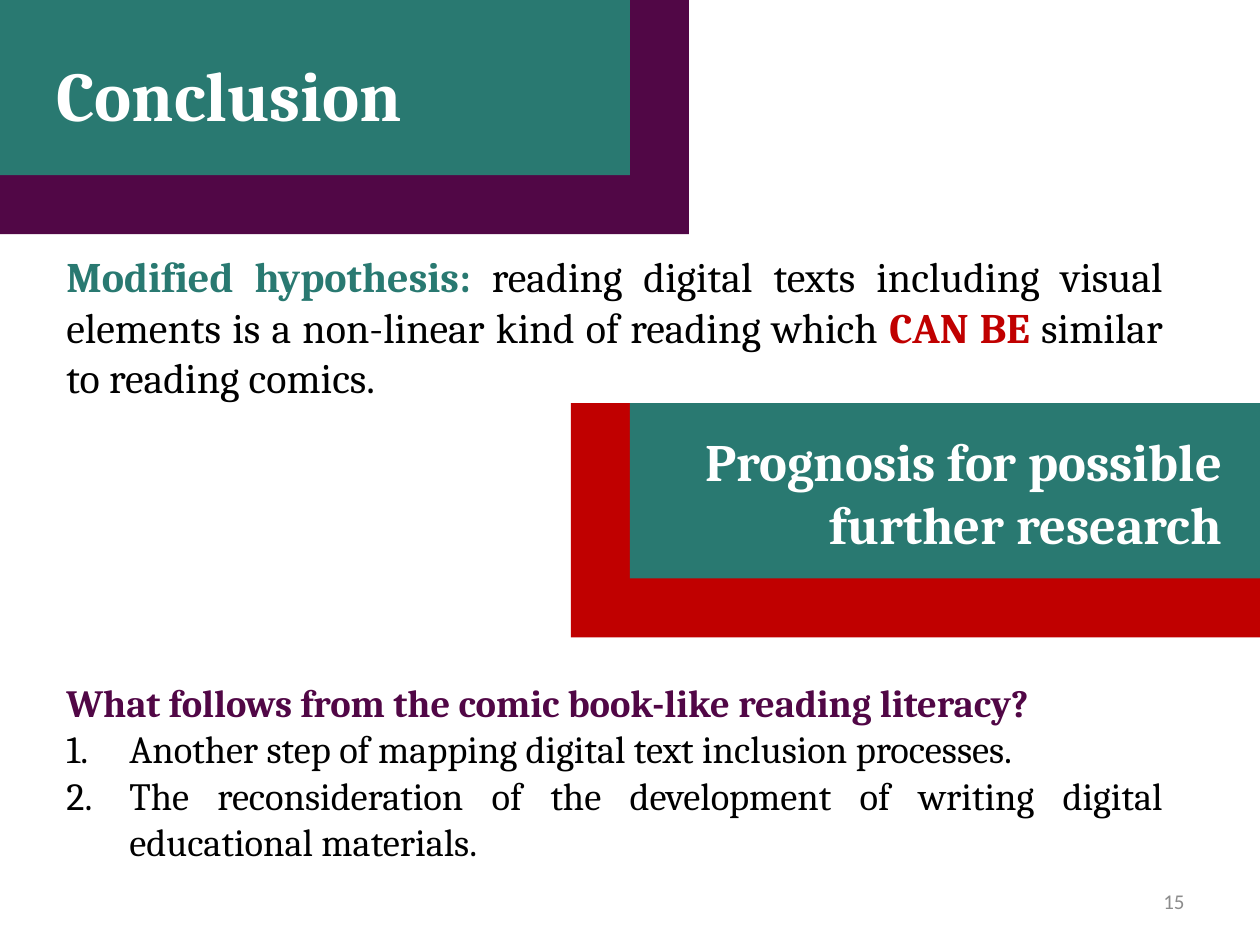
import dataclasses

import lxml.etree
import pptx
import pptx.dml.color
import pptx.enum.shapes
import pptx.enum.text
import pptx.oxml.ns
import pptx.util

Cm = pptx.util.Cm
Align = pptx.enum.text.PP_ALIGN
Anchor = pptx.enum.text.MSO_ANCHOR


@dataclasses.dataclass(frozen=True)
class Theme:
    heading_font: str = "Cambria"
    number_font: str = "Calibri"
    teal: str = "297971"
    purple: str = "510746"
    red: str = "C00000"
    black: str = "000000"
    white: str = "FFFFFF"
    grey: str = "8C8C8C"
    title_size: int = 40
    banner_size: int = 30
    hypothesis_size: int = 24
    list_size: int = 22
    number_size: int = 12


class SlideBuilder:
    def __init__(self, presentation, theme):
        self.theme = theme
        self.slide = presentation.slides.add_slide(presentation.slide_layouts[5])

    def background(self, color):
        fill = self.slide.background.fill
        fill.solid()
        fill.fore_color.rgb = pptx.dml.color.RGBColor.from_string(color)

    def rectangle(self, left, top, width, height, color):
        shape = self.slide.shapes.add_shape(
            pptx.enum.shapes.MSO_SHAPE.RECTANGLE,
            Cm(left), Cm(top), Cm(width), Cm(height))
        shape.shadow.inherit = False
        shape.fill.solid()
        shape.fill.fore_color.rgb = pptx.dml.color.RGBColor.from_string(color)
        shape.line.fill.background()

    def banner(self, left, top, border_color, border_side):
        """Draw a teal panel with a border below it and on its "left" or "right"."""
        width, height, border = 12.7, 3.53, 1.19
        border_left = left - border if border_side == "left" else left
        self.rectangle(border_left, top, width + border, height + border, border_color)
        self.rectangle(left, top, width, height, self.theme.teal)

    def title(self, text, left, top, width, height):
        shape = self.slide.shapes.title
        shape.left, shape.top, shape.width, shape.height = map(Cm, (left, top, width, height))
        # Bring the title in front of the banners.
        self.slide.shapes._spTree.append(shape._element)
        self.prepare_frame(shape.text_frame)
        self.fill_paragraph(shape.text_frame.paragraphs[0], [(text, self.theme.white, True)],
                            self.theme.title_size, Align.LEFT)

    def text_box(self, left, top, width, height, anchor=Anchor.TOP):
        shape = self.slide.shapes.add_textbox(Cm(left), Cm(top), Cm(width), Cm(height))
        self.prepare_frame(shape.text_frame, anchor)
        return shape.text_frame

    def prepare_frame(self, frame, anchor=Anchor.TOP):
        frame.word_wrap = True
        frame.auto_size = pptx.enum.text.MSO_AUTO_SIZE.NONE
        frame.vertical_anchor = anchor

    def fill_paragraph(self, paragraph, pieces, size, alignment, font=None):
        """Fill a paragraph with (text, color, bold) pieces."""
        paragraph.alignment = alignment
        paragraph.font.size = pptx.util.Pt(size)
        paragraph.font.name = font or self.theme.heading_font
        for text, color, bold in pieces:
            run = paragraph.add_run()
            run.text = text
            run.font.bold = bold
            run.font.color.rgb = pptx.dml.color.RGBColor.from_string(color)

    def numbered_list(self, frame, heading, items):
        size = self.theme.list_size
        self.fill_paragraph(frame.paragraphs[0], [(heading, self.theme.purple, True)],
                            size, Align.JUSTIFY)
        for item in items:
            paragraph = frame.add_paragraph()
            self.fill_paragraph(paragraph, [(item, self.theme.black, False)],
                                size, Align.JUSTIFY)
            properties = paragraph._p.get_or_add_pPr()
            properties.set("marL", str(Cm(1.27)))
            properties.set("indent", str(-Cm(1.27)))
            numbering = lxml.etree.Element(
                pptx.oxml.ns.qn("a:buAutoNum"), type="arabicPeriod")
            properties.insert(0, numbering)


def main():
    presentation = pptx.Presentation()
    presentation.slide_width, presentation.slide_height = Cm(25.4), Cm(19.05)
    theme = Theme()
    builder = SlideBuilder(presentation, theme)

    builder.background(theme.white)
    builder.banner(12.7, 8.13, theme.red, "left")
    builder.banner(0, 0, theme.purple, "right")
    builder.title("Conclusion", 0.89, 0.91, 10.11, 1.96)

    hypothesis = builder.text_box(1.09, 4.93, 22.6, 3.3)
    builder.fill_paragraph(hypothesis.paragraphs[0], [
        ("Modified hypothesis: ", theme.teal, True),
        ("reading digital texts including visual elements is a non-linear "
         "kind of reading which ", theme.black, False),
        ("CAN BE ", theme.red, True),
        ("similar to reading comics.", theme.black, False),
    ], theme.hypothesis_size, Align.JUSTIFY)

    prognosis = builder.text_box(12.7, 8.53, 12.19, 2.82)
    builder.fill_paragraph(prognosis.paragraphs[0],
                           [("Prognosis for possible further research", theme.white, True)],
                           theme.banner_size, Align.RIGHT)

    consequences = builder.text_box(1.09, 13.57, 22.6, 4)
    builder.numbered_list(
        consequences,
        "What follows from the comic book-like reading literacy?",
        ["Another step of mapping digital text inclusion processes.",
         "The reconsideration of the development of writing digital "
         "educational materials."])

    number = builder.text_box(18.21, 17.65, 5.92, 1.02, Anchor.MIDDLE)
    builder.fill_paragraph(number.paragraphs[0], [("15", theme.grey, False)],
                           theme.number_size, Align.RIGHT, theme.number_font)

    presentation.save("out.pptx")


if __name__ == "__main__":
    main()
